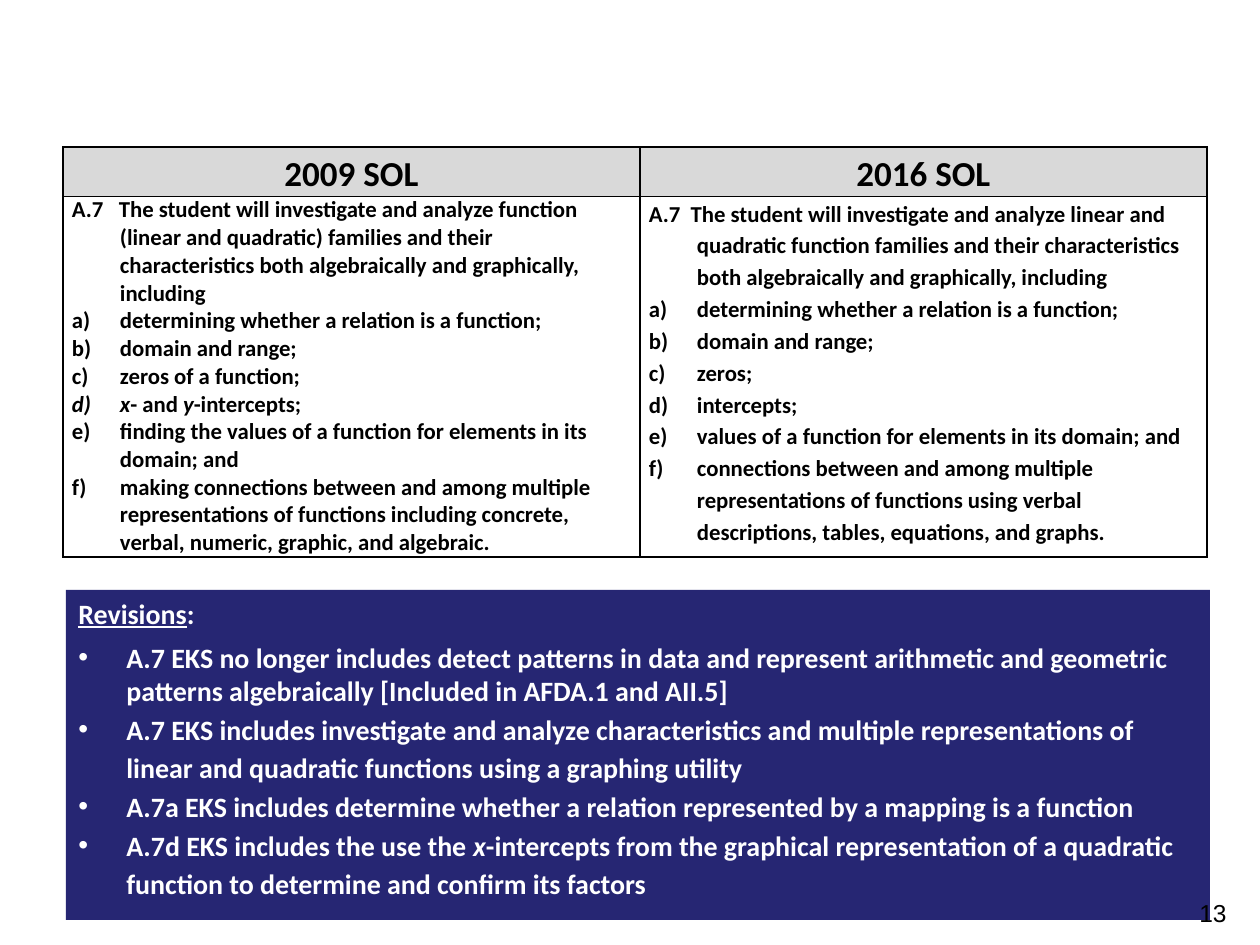
"""Build the slide comparing the 2009 and 2016 A.7 standards."""
from dataclasses import dataclass
from lxml.etree import SubElement
from pptx import Presentation
from pptx.dml.color import RGBColor
from pptx.enum.shapes import MSO_SHAPE
from pptx.enum.text import MSO_ANCHOR, PP_ALIGN
from pptx.oxml.ns import qn
from pptx.util import Emu, Pt


@dataclass(frozen=True)
class Theme:
    ink: RGBColor = RGBColor(0, 0, 0)
    paper: RGBColor = RGBColor(255, 255, 255)
    grey: RGBColor = RGBColor(0xD9, 0xD9, 0xD9)
    navy: RGBColor = RGBColor(0x26, 0x26, 0x73)
    font: str = "Calibri"
    head: int = 20
    body: int = 13
    note: int = 16
    page: int = 14


theme = Theme()
PX = 914400 // 126
INDENT = 48 * PX


def say(para, text, size, color):
    for i, part in enumerate(text.split("*")):
        if part:
            run = para.add_run()
            run.text = part
            font = run.font
            font.name, font.size, font.bold = theme.font, Pt(size), True
            font.italic = i % 2 == 1
            font.color.rgb = color
    return run


def hang(para, tag=None, **attrs):
    props = para._p.get_or_add_pPr()
    props.set("marL", str(INDENT))
    props.set("indent", str(-INDENT))
    if tag:
        SubElement(props, qn("a:buFont"), typeface="Arial" if tag == "a:buChar" else "+mj-lt")
        SubElement(props, qn(tag), **attrs)


deck = Presentation()
deck.slide_width, deck.slide_height = Emu(1260 * PX), Emu(945 * PX)
slide = deck.slides.add_slide(deck.slide_layouts[6])

columns = [
    ("2009 SOL", 577, 1.0,
     "A.7   The student will investigate and analyze function (linear and quadratic) families "
     "and their characteristics both algebraically and graphically, including",
     ["determining whether a relation is a function;",
      "domain and range;",
      "zeros of a function;",
      "*x*- and *y*-intercepts;",
      "finding the values of a function for elements in its domain; and",
      "making connections between and among multiple representations of functions "
      "including concrete, verbal, numeric, graphic, and algebraic."]),
    ("2016 SOL", 567, 1.15,
     "A.7  The student will investigate and analyze linear and quadratic function families "
     "and their characteristics both algebraically and graphically, including",
     ["determining whether a relation is a function;",
      "domain and range;",
      "zeros;",
      "intercepts;",
      "values of a function for elements in its domain; and",
      "connections between and among multiple representations of functions "
      "using verbal descriptions, tables, equations, and graphs."]),
]
frame = slide.shapes.add_table(2, 2, 63 * PX, 147 * PX, 1144 * PX, 409 * PX)
table = frame.table
for row, high in zip(table.rows, (49, 360)):
    row.height = Emu(high * PX)

for col, (title, wide, space, intro, items) in enumerate(columns):
    table.columns[col].width = Emu(wide * PX)
    top, main = table.cell(0, col), table.cell(1, col)
    for cell, shade in ((top, theme.grey), (main, theme.paper)):
        cell.margin_left = cell.margin_right = Emu(9 * PX)
        cell.margin_top = cell.margin_bottom = 0
        cell.vertical_anchor = MSO_ANCHOR.TOP
        props = cell._tc.get_or_add_tcPr()
        for side in ("L", "R", "T", "B"):
            line = SubElement(props, qn(f"a:ln{side}"), w=str(Pt(1)))
            paint = SubElement(line, qn("a:solidFill"))
            SubElement(paint, qn("a:srgbClr"), val=str(theme.ink))
        cell.fill.solid()
        cell.fill.fore_color.rgb = shade

    para = top.text_frame.paragraphs[0]
    para.alignment, para.line_spacing = PP_ALIGN.CENTER, 1.15
    say(para, title, theme.head, theme.ink)

    para = main.text_frame.paragraphs[0]
    hang(para)
    para.line_spacing = space
    say(para, intro, theme.body, theme.ink)
    for item in items:
        para = main.text_frame.add_paragraph()
        hang(para, "a:buAutoNum", type="alphaLcParenR")
        para.line_spacing = space
        say(para, item, theme.body, theme.ink)
    para.space_after = Pt(6)

panel = slide.shapes.add_shape(MSO_SHAPE.RECTANGLE, 66 * PX, 590 * PX, 1144 * PX, 330 * PX)
panel.shadow.inherit = False
panel.fill.solid()
panel.fill.fore_color.rgb = theme.navy
panel.line.fill.background()
text = panel.text_frame
text.word_wrap, text.vertical_anchor = True, MSO_ANCHOR.TOP
para = text.paragraphs[0]
para.alignment = PP_ALIGN.LEFT
say(para, "Revisions", theme.note, theme.paper).font.underline = True
say(para, ":", theme.note, theme.paper)

notes = [
    "A.7 EKS no longer includes detect patterns in data and represent arithmetic and geometric "
    "patterns algebraically [Included in AFDA.1 and AII.5]",
    "A.7 EKS includes investigate and analyze characteristics and multiple representations of "
    "linear and quadratic functions using a graphing utility",
    "A.7a EKS includes determine whether a relation represented by a mapping is a function",
    "A.7d EKS includes the use the *x*-intercepts from the graphical representation of a quadratic "
    "function to determine and confirm its factors",
]
for i, note in enumerate(notes):
    para = text.add_paragraph()
    hang(para, "a:buChar", char="•")
    para.alignment = PP_ALIGN.LEFT
    para.line_spacing = 1.15 if i else 1.0
    para.space_before = Pt(0 if i else 6)
    say(para, note, theme.note, theme.paper)

page = slide.shapes.add_textbox(945 * PX, 892 * PX, 294 * PX, 66 * PX)
page.text_frame.word_wrap = True
para = page.text_frame.paragraphs[0]
para.alignment = PP_ALIGN.RIGHT
font = say(para, "13", theme.page, theme.ink).font
font.name, font.bold = "Arial", False

deck.save("out.pptx")
